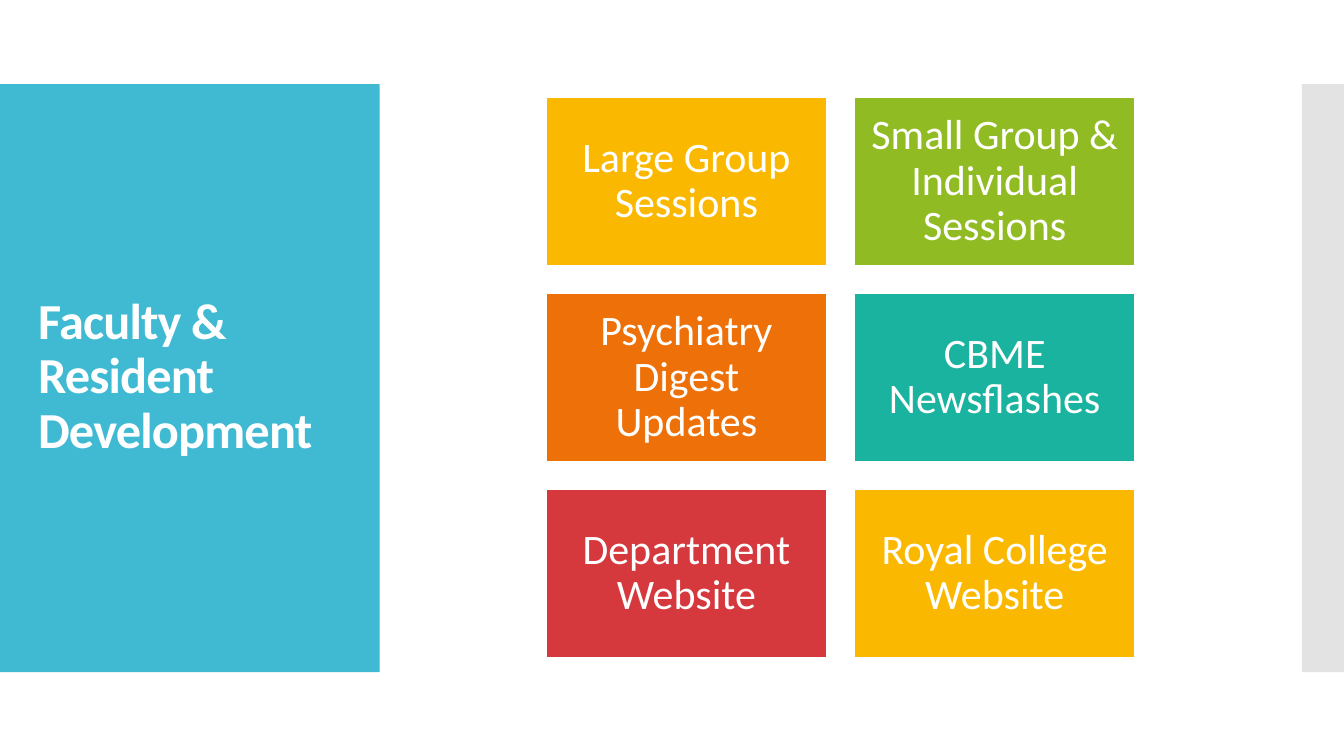
"""Build the Faculty & Resident Development slide."""
import lxml.etree
import pptx
import pptx.dml.color
import pptx.enum.shapes
import pptx.enum.text
import pptx.oxml.ns
import pptx.util

Cm = pptx.util.Cm
Pt = pptx.util.Pt

COLOURS = {
    "white": "FFFFFF",
    "blue": "40BAD2",
    "grey": "C8C8C8",
    "yellow": "FAB900",
    "green": "90BB23",
    "orange": "EE7008",
    "teal": "1AB39F",
    "red": "D5393D",
}

TILES = [
    ("Large Group Sessions", "yellow"),
    ("Small Group & Individual Sessions", "green"),
    ("Psychiatry Digest Updates", "orange"),
    ("CBME Newsflashes", "teal"),
    ("Department Website", "red"),
    ("Royal College Website", "yellow"),
]


def colour(name):
    """Return the RGB colour with this name."""
    return pptx.dml.color.RGBColor.from_string(COLOURS[name])


def write_text(shape, text, size, font="Calibri", bold=False, align="LEFT",
               inset=(0.25, 0.13), spacing=None):
    """Write one formatted, vertically centred paragraph in a shape."""
    frame = shape.text_frame
    frame.word_wrap = True
    frame.auto_size = pptx.enum.text.MSO_AUTO_SIZE.NONE
    frame.vertical_anchor = pptx.enum.text.MSO_ANCHOR.MIDDLE
    frame.margin_left = frame.margin_right = Cm(inset[0])
    frame.margin_top = frame.margin_bottom = Cm(inset[1])
    paragraph = frame.paragraphs[0]
    paragraph.alignment = pptx.enum.text.PP_ALIGN[align]
    paragraph.line_spacing = 0.9
    paragraph.space_before = Pt(0)
    run = paragraph.add_run()
    run.text = text
    run.font.name = font
    run.font.size = Pt(size)
    run.font.bold = bold
    run.font.color.rgb = colour("white")
    if spacing is not None:
        run._r.get_or_add_rPr().set("spc", str(round(spacing * 100)))


class SlideBuilder:
    """Hold the current slide and its style."""

    def __init__(self, slide):
        """Keep the slide to draw on."""
        self.slide = slide

    def rectangle(self, left, top, width, height, fill, opacity=None):
        """Add a filled rectangle without outline."""
        shape = self.slide.shapes.add_shape(
            pptx.enum.shapes.MSO_SHAPE.RECTANGLE,
            Cm(left), Cm(top), Cm(width), Cm(height))
        shape.shadow.inherit = False
        shape.fill.solid()
        shape.fill.fore_color.rgb = colour(fill)
        shape.line.fill.background()
        if opacity is not None:
            name = pptx.oxml.ns.qn("a:srgbClr")
            fill_colour = next(shape.element.spPr.iter(name))
            lxml.etree.SubElement(fill_colour, pptx.oxml.ns.qn("a:alpha"),
                                  val=str(opacity * 1000))
        return shape

    def title(self, text, left, top, width, height):
        """Place the title placeholder in front of the panels."""
        title = self.slide.shapes.title
        title.left, title.top = Cm(left), Cm(top)
        title.width, title.height = Cm(width), Cm(height)
        write_text(title, text, 36, bold=True, spacing=-0.6)
        title.element.getparent().append(title.element)

    def tile(self, text, left, top, fill):
        """Add a white-edged tile with centred text."""
        tile = self.rectangle(left, top, 7.06, 4.23, fill)
        tile.line.color.rgb = colour("white")
        tile.line.width = Pt(0.85)
        write_text(tile, text, 30, align="CENTER", inset=(0.3, 0.3))


def main():
    """Build and save the presentation."""
    presentation = pptx.Presentation()
    presentation.slide_width = Cm(33.87)
    presentation.slide_height = Cm(19.05)
    slide = presentation.slides.add_slide(presentation.slide_layouts[5])
    builder = SlideBuilder(slide)
    builder.rectangle(0, 2.12, 9.57, 14.82, "blue")
    builder.rectangle(32.81, 2.12, 1.06, 14.82, "grey", opacity=50)
    builder.title("Faculty & Resident Development", 0.71, 3.12, 8.18, 12.78)
    for index, (text, fill) in enumerate(TILES):
        row, column = divmod(index, 2)
        builder.tile(text, 13.77 + 7.77 * column, 2.46 + 4.94 * row, fill)
    presentation.save("out.pptx")


if __name__ == "__main__":
    main()
